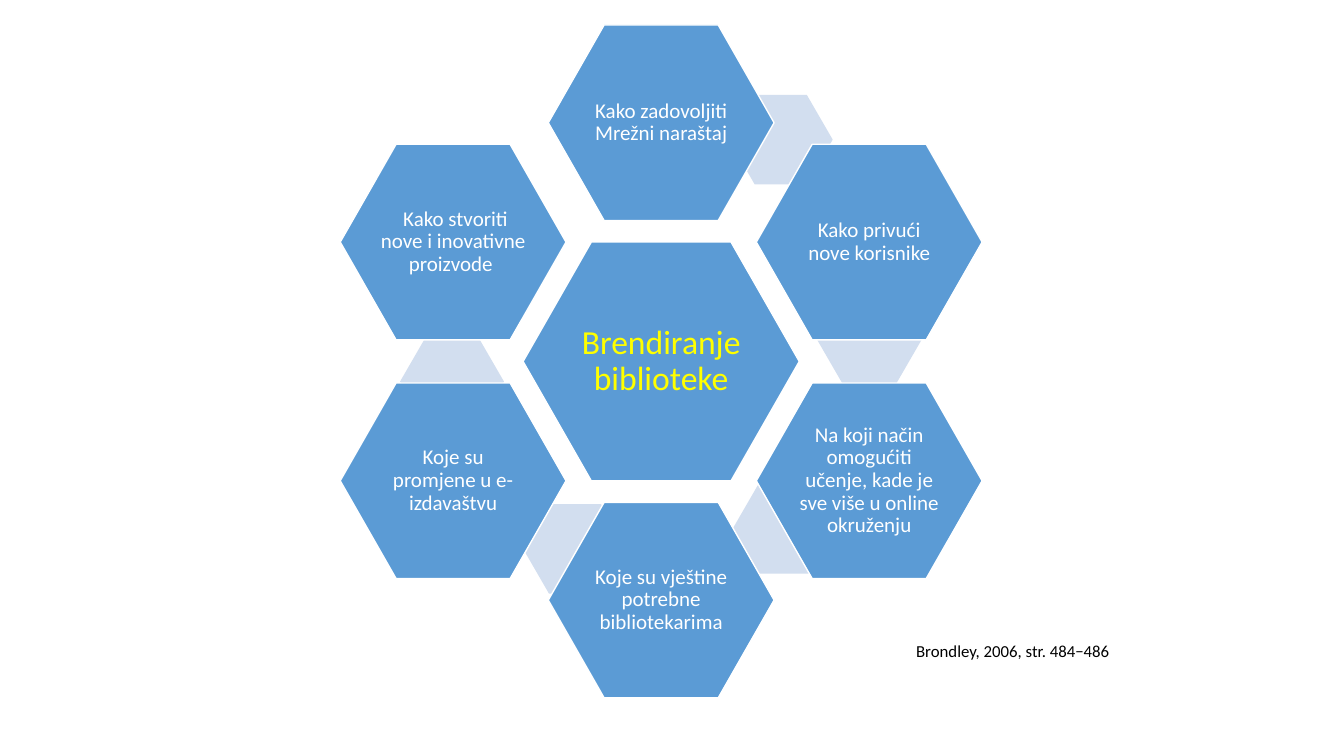
from pptx import Presentation
from pptx.dml.color import RGBColor
from pptx.enum import shapes, text
from pptx.util import Pt

COLORS = {
    "hexagon": "5B9BD5",
    "link": "D2DEEF",
    "white": "FFFFFF",
    "topic": "FFFF00",
    "citation": "000000",
}
CENTER_X, CENTER_Y = 472.3, 258.2
RING_X, RING_Y = 148.6, 170.5
TOPIC_SIZE = (197.3, 170.6)
QUESTION_SIZE = (161.3, 139.7)
LINK_SIZE = (74.2, 64.1)

QUESTIONS = [
    ("Kako zadovoljiti Mrežni naraštaj", (0, -1), (520.6, 67.7)),
    ("Kako privući nove korisnike", (1, -0.5), (583.9, 211)),
    ("Na koji način omogućiti učenje, kade je sve više u online okruženju",
     (1, 0.5), (523.4, 345.6)),
    ("Koje su vještine potrebne bibliotekarima", (0, 1), (373.7, 360)),
    ("Koje su promjene u e-izdavaštvu", (-1, 0.5), (285.8, 240.5)),
    (" Kako stvoriti nove i inovativne proizvode ", (-1, -0.5), None),
]


def rgb(name):
    return RGBColor.from_string(COLORS[name])


def write(shape, words, *, size, color, align, spacing=1.0, inset=None):
    frame = shape.text_frame
    frame.word_wrap = True
    if inset is not None:
        frame.margin_left = frame.margin_right = Pt(inset)
        frame.margin_top = frame.margin_bottom = Pt(inset)
    paragraph = frame.paragraphs[0]
    paragraph.alignment = align
    paragraph.line_spacing = spacing
    run = paragraph.add_run()
    run.text = words
    run.font.name = "Calibri"
    run.font.size = Pt(size)
    run.font.color.rgb = rgb(color)


def add_hexagon(slide, left, top, size, fill, slant, outline=None):
    width, height = size
    hexagon = slide.shapes.add_shape(
        shapes.MSO_SHAPE.HEXAGON, Pt(left), Pt(top), Pt(width), Pt(height))
    hexagon.adjustments[0] = slant
    hexagon.shadow.inherit = False
    hexagon.fill.solid()
    hexagon.fill.fore_color.rgb = rgb(fill)
    if outline:
        hexagon.line.color.rgb = rgb(outline)
        hexagon.line.width = Pt(1)
    else:
        hexagon.line.fill.background()
    return hexagon


def add_labelled_hexagon(slide, words, center, size, font_size, color, inset):
    left, top = (middle - length / 2 for middle, length in zip(center, size))
    hexagon = add_hexagon(slide, left, top, size, "hexagon", 0.2857, "white")
    hexagon.text_frame.vertical_anchor = text.MSO_ANCHOR.MIDDLE
    write(hexagon, words, size=font_size, color=color, inset=inset,
          align=text.PP_ALIGN.CENTER, spacing=0.9)


def add_citation(slide, words):
    citation = slide.shapes.add_textbox(Pt(647.3), Pt(454.3), Pt(283), Pt(21.6))
    citation.text_frame.auto_size = text.MSO_AUTO_SIZE.SHAPE_TO_FIT_TEXT
    write(citation, words, size=12, color="citation",
          align=text.PP_ALIGN.JUSTIFY)


def main():
    deck = Presentation()
    deck.slide_width, deck.slide_height = Pt(960), Pt(540)
    slide = deck.slides.add_slide(deck.slide_layouts[6])

    add_labelled_hexagon(slide, "Brendiranje biblioteke", (CENTER_X, CENTER_Y),
                         TOPIC_SIZE, 24, "topic", 2.4)
    for question, (across, down), link in QUESTIONS:
        if link:
            add_hexagon(slide, *link, LINK_SIZE, "link", 0.289)
        center = (CENTER_X + across * RING_X, CENTER_Y + down * RING_Y)
        add_labelled_hexagon(slide, question, center, QUESTION_SIZE,
                             15, "white", 1.5)
    add_citation(slide, "Brondley, 2006, str. 484−486")

    deck.save("out.pptx")


if __name__ == "__main__":
    main()
